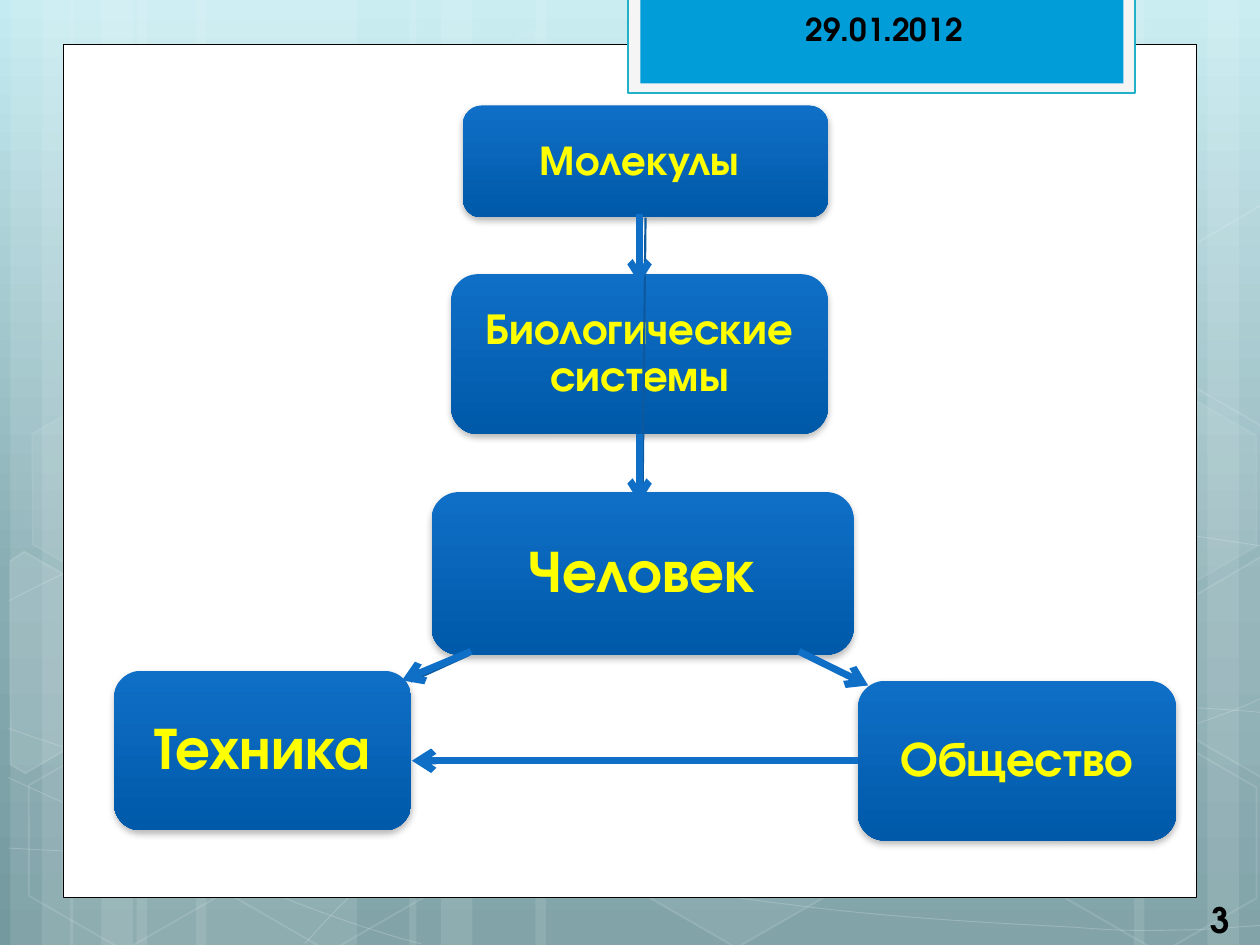
import pptx
import pptx.util
import pptx.dml.color
import pptx.enum.shapes
import pptx.enum.text
import pptx.oxml.ns
from dataclasses import dataclass
from lxml import etree

Pt = pptx.util.Pt
qn = pptx.oxml.ns.qn
SHAPE = pptx.enum.shapes.MSO_SHAPE
ALIGN = pptx.enum.text.PP_ALIGN


@dataclass(frozen=True)
class Theme:
    font: str = "TeX Gyre Adventor"
    backdrop: tuple = ((0, "C4EBF1"), (62, "88ADB3"), (100, "749AA0"))
    node: tuple = ((0, "0F6FC6"), (100, "0059A9"))
    white: str = "FFFFFF"
    black: str = "000000"
    ribbon: str = "009DD9"
    ribbon_frame: str = "F5F5F5"
    ribbon_line: str = "21B2C9"
    label: str = "FFFF00"
    link: str = "0C599F"
    arrow: str = "0F6FC6"
    date_size: int = 18
    number_size: int = 20
    small: int = 24
    medium: int = 25
    large: int = 28
    huge: int = 34


@dataclass(frozen=True)
class Box:
    left: float
    top: float
    width: float
    height: float

    def inner(self, left, top, width, height):
        return Box(self.left + left, self.top + top, width, height)

    def point(self, x, y):
        return Pt(self.left + x), Pt(self.top + y)

    def lengths(self):
        return [Pt(value) for value in (self.left, self.top, self.width, self.height)]


THEME = Theme()

STRIPES = [(78, 126), (6, 36), (24, 60), (112, 126), (40, 36), (58, 60),
           (528, 126), (690, 36), (648, 60), (306, 222), (234, 36), (252, 60)]

CURVES = [
    [(5, 484.6), (43.9, 486.7), (82.8, 488.9), (136.8, 488.2), (190.8, 487.4),
     (257.8, 486), (329.8, 478.8), (401.8, 471.6), (504, 457.9), (570.2, 444.2),
     (635.8, 430.6), (703.4, 409), (725, 396.7)],
    [(5, 343.4), (25.9, 332.6), (46.8, 321.1), (87.1, 310.3), (128.2, 299.5),
     (186.5, 283.7), (249.8, 278.6), (313.9, 273.6), (390.2, 272.9), (470.9, 278.6),
     (550.1, 284.4), (681.8, 306.7), (725, 312.5)],
    [(4.3, 444.2), (91.4, 483.8), (177.8, 523.4), (240.5, 539.3)],
    [(5, 416.2), (27.4, 424.1), (50.4, 432), (92.2, 443.5), (133.9, 454.3),
     (196.6, 472.3), (257, 484.6), (316.8, 496.8), (392.4, 509.8), (452.2, 517),
     (511.9, 524.9), (576, 527.8), (614.2, 529.9), (651.6, 532.8), (661.7, 531.4),
     (680.4, 531.4), (699.1, 530.6), (712.1, 529.2), (725, 528.5)],
    [(174.2, 539.3), (187.2, 524.9), (200.2, 510.5), (217.4, 497.5), (234.7, 484.6),
     (259.2, 470.2), (279.4, 460.1), (299.5, 450), (311.8, 445.7), (338.4, 438.5),
     (364.3, 431.3), (412.6, 421.2), (437.8, 416.2), (463.7, 411.1), (467.3, 411.1),
     (489.6, 409.7), (511.9, 407.5), (547.2, 405.4), (571.7, 404.6), (596.9, 403.9),
     (637.9, 404.6), (637.9, 404.6), (654, 404.6), (670, 404.6), (686.2, 404.6),
     (699.1, 405.4), (711.4, 406.1), (724.3, 407.5)],
]

HEXAGONS = [(240.5, 26, 4, 8), (358, 424, 6, 12), (8, 425.5, None, 12),
            (10, 224.6, 7, 8), (125.3, 426.2, None, 12), (542.2, 326.2, 10, 12),
            (600.5, 427, None, 12), (600.5, 226, 7, 8)]

LEFT_PIECE = [(0, 8.6), (4.3, 0), (68, 0), (99.1, 55.3), (68.2, 109.4), (58.3, 109.4)]
RIGHT_PIECE = [(0, 54.4), (30.9, 0), (37.7, 0), (97.9, 104.4), (94.9, 109.4), (31.7, 109.4)]
PIECES = [(LEFT_PIECE, -23.8, 330.5, 10), (RIGHT_PIECE, 660.2, 319.7, 4),
          (RIGHT_PIECE, 660.2, 118.8, None)]


def add_element(parent, tag, **attributes):
    return etree.SubElement(parent, qn(tag), {key: str(value) for key, value in attributes.items()})


def set_color(fill, color, alpha=100):
    fill.solid()
    fill.fore_color.rgb = pptx.dml.color.RGBColor.from_string(color)
    if alpha < 100:
        add_element(fill._xPr.find(qn("a:solidFill"))[0], "a:alpha", val=alpha * 1000)


def set_gradient(fill, element, stops):
    fill.gradient()
    fill.gradient_angle = 270
    stop_list = next(element.iter(qn("a:gsLst")))
    for stop in list(stop_list):
        stop_list.remove(stop)
    for position, color in stops:
        add_element(add_element(stop_list, "a:gs", pos=position * 1000), "a:srgbClr", val=color)


def paint(shape, fill=None, alpha=100, line=None, width=1, line_alpha=100):
    shape.shadow.inherit = False
    if fill and alpha:
        set_color(shape.fill, fill, alpha)
    else:
        shape.fill.background()
    if line:
        set_color(shape.line.fill, line, line_alpha)
        shape.line.width = Pt(width)
    else:
        shape.line.fill.background()


def add_panel(slide, box, kind=SHAPE.RECTANGLE, **style):
    shape = slide.shapes.add_shape(kind, *box.lengths())
    paint(shape, **style)
    return shape


def add_outline(slide, box, points, close, **style):
    spots = [box.point(x, y) for x, y in points]
    builder = slide.shapes.build_freeform(*spots[0])
    builder.add_line_segments(spots[1:], close=close)
    outline = builder.convert_to_shape()
    paint(outline, **style)
    return outline


def bend(outline):
    segments = list(outline.element.iter(qn("a:lnTo")))
    route = segments[0].getparent()
    for index in range(0, len(segments), 3):
        curve = add_element(route, "a:cubicBezTo")
        for segment in segments[index:index + 3]:
            curve.append(segment[0])
            route.remove(segment)


def write(shape, text, size, color, align=ALIGN.CENTER, spacing=1.0, inset=7.2):
    frame = shape.text_frame
    frame.word_wrap = True
    frame.vertical_anchor = pptx.enum.text.MSO_ANCHOR.MIDDLE
    frame.margin_left = frame.margin_right = Pt(inset)
    para = frame.paragraphs[0]
    para.alignment = align
    para.line_spacing = spacing
    span = para.add_run()
    span.text = text
    span.font.name = THEME.font
    span.font.size = Pt(size)
    span.font.bold = True
    span.font.color.rgb = pptx.dml.color.RGBColor.from_string(color)


def draw_backdrop(slide, box):
    set_gradient(slide.background.fill, slide.element, THEME.backdrop)
    for left, width in STRIPES:
        add_panel(slide, box.inner(left, 0, width, box.height), fill=THEME.white, alpha=10)
    for curve in CURVES:
        bend(add_outline(slide, box, curve, False, line=THEME.white, width=0.5, line_alpha=20))
    for left, top, alpha, line_alpha in HEXAGONS:
        hexagon = add_panel(slide, box.inner(left, top, 126, 109.4), SHAPE.HEXAGON,
                            fill=THEME.white, alpha=alpha, line=THEME.white, line_alpha=line_alpha)
        hexagon.adjustments[0] = 0.29
        hexagon.rotation = 30
    for points, left, top, alpha in PIECES:
        piece = add_outline(slide, box.inner(left, top, 99, 109.4), points, True,
                            fill=THEME.white, alpha=alpha, line=THEME.white, line_alpha=12)
        piece.rotation = 30


def draw_ribbon(slide, box):
    add_panel(slide, box, fill=THEME.ribbon_frame, line=THEME.ribbon_line, width=1.25)
    add_panel(slide, box.inner(7, 0, 276, 49), fill=THEME.ribbon)
    date = slide.shapes.add_textbox(*box.inner(74.4, 3.6, 124, 28.8).lengths())
    write(date, "29.01.2012", THEME.date_size, THEME.black, align=ALIGN.RIGHT)


def draw_number(slide, box):
    write(slide.shapes.add_textbox(*box.lengths()), "3", THEME.number_size, THEME.black)


def add_node(slide, box, text, size):
    node = add_panel(slide, box, SHAPE.ROUNDED_RECTANGLE)
    set_gradient(node.fill, node.element, THEME.node)
    effects = next(node.element.iter(qn("a:effectLst")))
    shadow = add_element(effects, "a:outerShdw", blurRad=Pt(4), dist=Pt(2), dir=5400000, rotWithShape=0)
    add_element(add_element(shadow, "a:srgbClr", val=THEME.black), "a:alpha", val=28000)
    write(node, text, size, THEME.label, spacing=0.9, inset=10)
    return node


def add_link(slide, box, start, end, color, width, arrow=False):
    spots = [box.point(*spot) if isinstance(spot[0], (int, float)) else (0, 0) for spot in (start, end)]
    link = slide.shapes.add_connector(pptx.enum.shapes.MSO_CONNECTOR.STRAIGHT, *spots[0], *spots[1])
    for spot, connect in ((start, link.begin_connect), (end, link.end_connect)):
        if not isinstance(spot[0], (int, float)):
            connect(*spot)
    set_color(link.line.fill, color)
    link.line.width = Pt(width)
    properties = link.element.spPr
    if arrow:
        add_element(properties.find(qn("a:ln")), "a:tailEnd", type="arrow")
    add_element(properties, "a:effectLst")


def draw_diagram(slide, box):
    add_panel(slide, box, fill=THEME.white, line=THEME.black, width=0.5)
    draw_ribbon(slide, box.inner(322.9, -27.1, 289.7, 54.7))
    human = add_node(slide, box.inner(210.6, 255.5, 241.2, 92.9), "Человек", THEME.huge)
    biology = add_node(slide, box.inner(221.8, 131, 215.3, 91.4), "Биологические системы", THEME.medium)
    molecules = add_node(slide, box.inner(228.5, 34.6, 208.8, 64), "Молекулы ", THEME.small)
    add_node(slide, box.inner(29.2, 357.7, 169.8, 91.1), "Техника", THEME.huge)
    society = add_node(slide, box.inner(454.3, 363.4, 181.8, 91.2), "Общество", THEME.large)
    for start, end in (((human, 0), (biology, 2)), ((human, 0), (molecules, 2)),
                       ((231.8, 348.7), (198.7, 363.8)), ((424.1, 348.7), (454.3, 363.8))):
        add_link(slide, box, start, end, THEME.link, 1.25)
    for start, end in (((society, 1), (199.4, 409)), ((233.3, 346.5), (193.7, 363.1)),
                       ((420.5, 346.5), (460.1, 366)), ((biology, 2), (329.45, 261.6)),
                       ((329.45, 96.7), (329.45, 136.3))):
        add_link(slide, box, start, end, THEME.arrow, 4, arrow=True)


def main():
    deck = pptx.Presentation()
    deck.slide_width, deck.slide_height = Pt(720), Pt(540)
    slide = deck.slides.add_slide(deck.slide_layouts[6])
    page = Box(0, 0, 720, 540)
    draw_backdrop(slide, page)
    draw_diagram(slide, page.inner(36, 25.7, 648, 487.4))
    draw_number(slide, page.inner(675, 511.2, 44.6, 28.8))
    deck.save("out.pptx")


if __name__ == "__main__":
    main()
